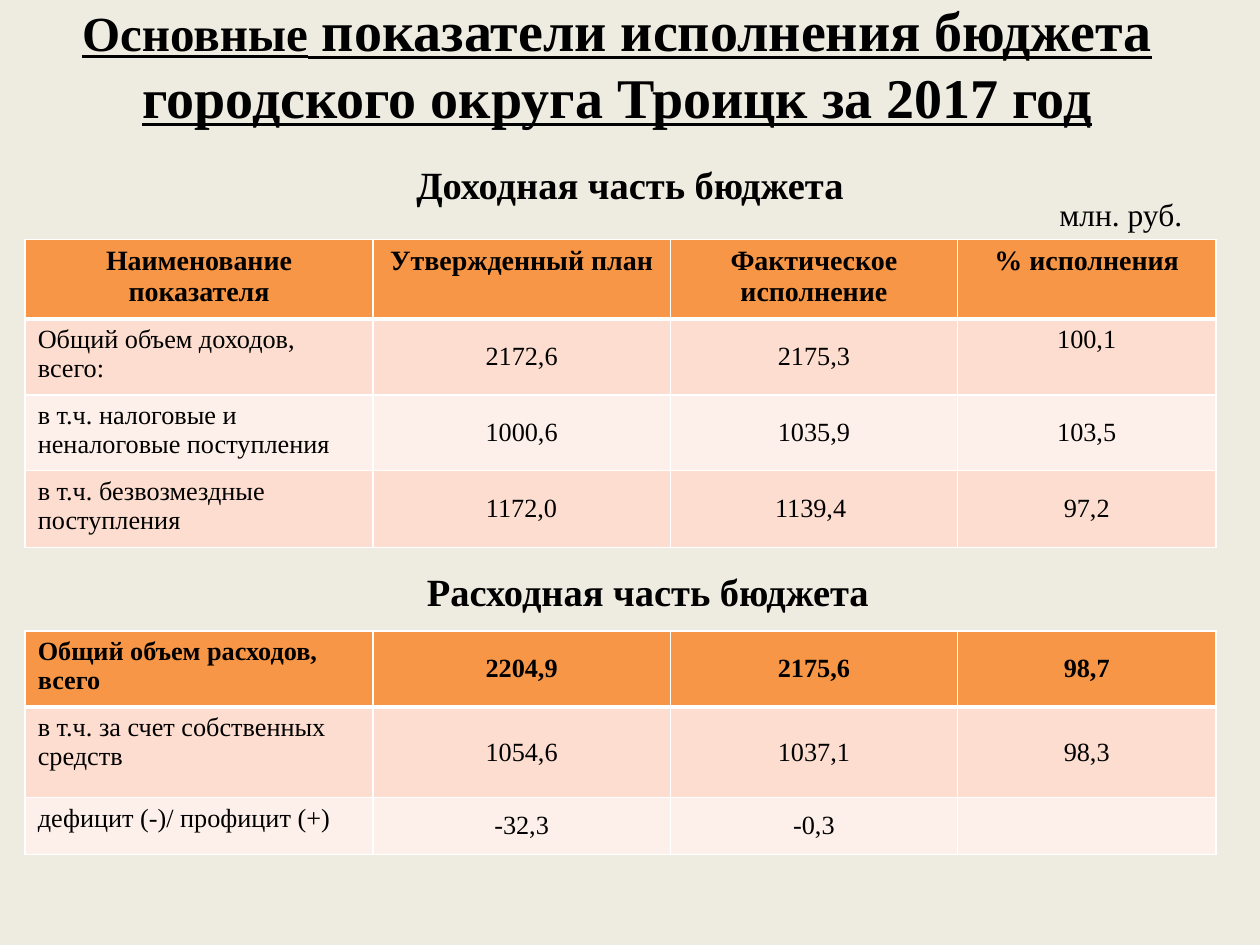
from dataclasses import dataclass

from lxml import etree
from pptx import Presentation
from pptx.dml.color import RGBColor
from pptx.enum.text import MSO_ANCHOR, PP_ALIGN
from pptx.oxml.ns import qn
from pptx.util import Inches, Pt

FONT = "Times New Roman"
BLACK = RGBColor(0x00, 0x00, 0x00)
WHITE = RGBColor(0xFF, 0xFF, 0xFF)
BEIGE = RGBColor(0xEE, 0xEC, 0xE1)
ORANGE = RGBColor(0xF7, 0x96, 0x46)
BANDS = (RGBColor(0xFC, 0xDD, 0xCF), RGBColor(0xFD, 0xEF, 0xE9))
LEFT, CENTER = PP_ALIGN.LEFT, PP_ALIGN.CENTER
TOP, MIDDLE = MSO_ANCHOR.TOP, MSO_ANCHOR.MIDDLE

WIDTH, HEIGHT = Inches(10), Inches(7.5)
TABLE_LEFT = 2
COLUMNS = (27.6, 23.6, 22.8, 20.5)


@dataclass(frozen=True)
class Box:
    left: float
    top: float
    width: float
    height: float


@dataclass(frozen=True)
class BudgetTable:
    top: float
    row_heights: tuple[float, ...]
    rows: tuple[tuple[str, ...], ...]
    titled: bool = False
    top_cells: tuple[tuple[int, int], ...] = ()


INCOME = BudgetTable(
    25.33,
    (8.27, 7.87, 7.87, 8.13),
    (
        ("Наименование показателя", "Утвержденный план", "Фактическое исполнение", "% исполнения"),
        ("Общий объем доходов, всего:", "2172,6", "2175,3", "100,1"),
        ("в т.ч. налоговые и неналоговые поступления", "1000,6", "1035,9", "103,5"),
        ("в т.ч. безвозмездные поступления", "1172,0", "1139,4 ", "97,2"),
    ),
    titled=True,
    top_cells=((1, 3),),
)
EXPENSES = BudgetTable(
    66.8,
    (8, 9.6, 6),
    (
        ("Общий объем расходов, всего", "2204,9", "2175,6", "98,7"),
        ("в т.ч. за счет собственных средств", "1054,6", "1037,1", "98,3"),
        ("дефицит (-)/ профицит (+)", "-32,3", "-0,3", ""),
    ),
)


def across(percent: float) -> int:
    return round(WIDTH * percent / 100)


def down(percent: float) -> int:
    return round(HEIGHT * percent / 100)


def add_run(p, text: str, *, size: float, bold: bool = False,
            underline: bool = False, align=LEFT) -> None:
    p.alignment = align
    r = p.add_run()
    r.text = text
    r.font.name = FONT
    r.font.size = Pt(size)
    r.font.bold = bold
    r.font.underline = underline
    r.font.color.rgb = BLACK


def add_box(s, box: Box, *, wrap: bool = True, anchor=TOP):
    sp = s.shapes.add_textbox(across(box.left), down(box.top), across(box.width), down(box.height))
    tf = sp.text_frame
    tf.word_wrap = wrap
    tf.vertical_anchor = anchor
    return tf.paragraphs[0]


def set_borders(cell, bottom: float) -> None:
    tc_pr = cell._tc.get_or_add_tcPr()
    for i, (side, width) in enumerate((("L", 1), ("R", 1), ("T", 1), ("B", bottom))):
        ln = etree.Element(qn(f"a:ln{side}"), w=str(Pt(width)))
        fill = etree.SubElement(ln, qn("a:solidFill"))
        etree.SubElement(fill, qn("a:srgbClr"), val=str(WHITE))
        tc_pr.insert(i, ln)


def add_budget_table(s, data: BudgetTable) -> None:
    frame = s.shapes.add_table(
        len(data.rows), len(COLUMNS), across(TABLE_LEFT), down(data.top),
        across(sum(COLUMNS)), down(sum(data.row_heights)))
    table = frame.table
    for column, width in zip(table.columns, COLUMNS):
        column.width = across(width)
    for i, (height, texts) in enumerate(zip(data.row_heights, data.rows)):
        table.rows[i].height = down(height)
        header = i == 0
        title_row = header and data.titled
        for j, text in enumerate(texts):
            cell = table.cell(i, j)
            cell.fill.solid()
            cell.fill.fore_color.rgb = ORANGE if header else BANDS[(i - 1) % 2]
            at_top = title_row or j == 0 or (i, j) in data.top_cells
            cell.vertical_anchor = TOP if at_top else MIDDLE
            set_borders(cell, 3 if header else 1)
            if text:
                add_run(cell.text_frame.paragraphs[0], text,
                        size=16 if title_row else 15, bold=header,
                        align=CENTER if title_row or j else LEFT)


def main() -> None:
    prs = Presentation()
    prs.slide_width, prs.slide_height = WIDTH, HEIGHT
    s = prs.slides.add_slide(prs.slide_layouts[6])
    s.background.fill.solid()
    s.background.fill.fore_color.rgb = BEIGE

    p = add_box(s, Box(2.8, 0.4, 92.4, 12.4), anchor=MIDDLE)
    add_run(p, "Основные", size=28, bold=True, underline=True, align=CENTER)
    add_run(p, " показатели исполнения бюджета городского округа Троицк за 2017 год",
            size=32, bold=True, underline=True, align=CENTER)

    p = add_box(s, Box(1.2, 16.4, 97.6, 82.93))
    add_run(p, "Доходная часть бюджета", size=22, bold=True, align=CENTER)
    add_budget_table(s, INCOME)

    p = add_box(s, Box(83.1, 20, 11.9, 5.33), wrap=False)
    add_run(p, "млн. руб.", size=18)
    p = add_box(s, Box(32.9, 59.47, 37.5, 6.27), wrap=False)
    add_run(p, "Расходная часть бюджета", size=22, bold=True)
    add_budget_table(s, EXPENSES)

    prs.save("out.pptx")


if __name__ == "__main__":
    main()
